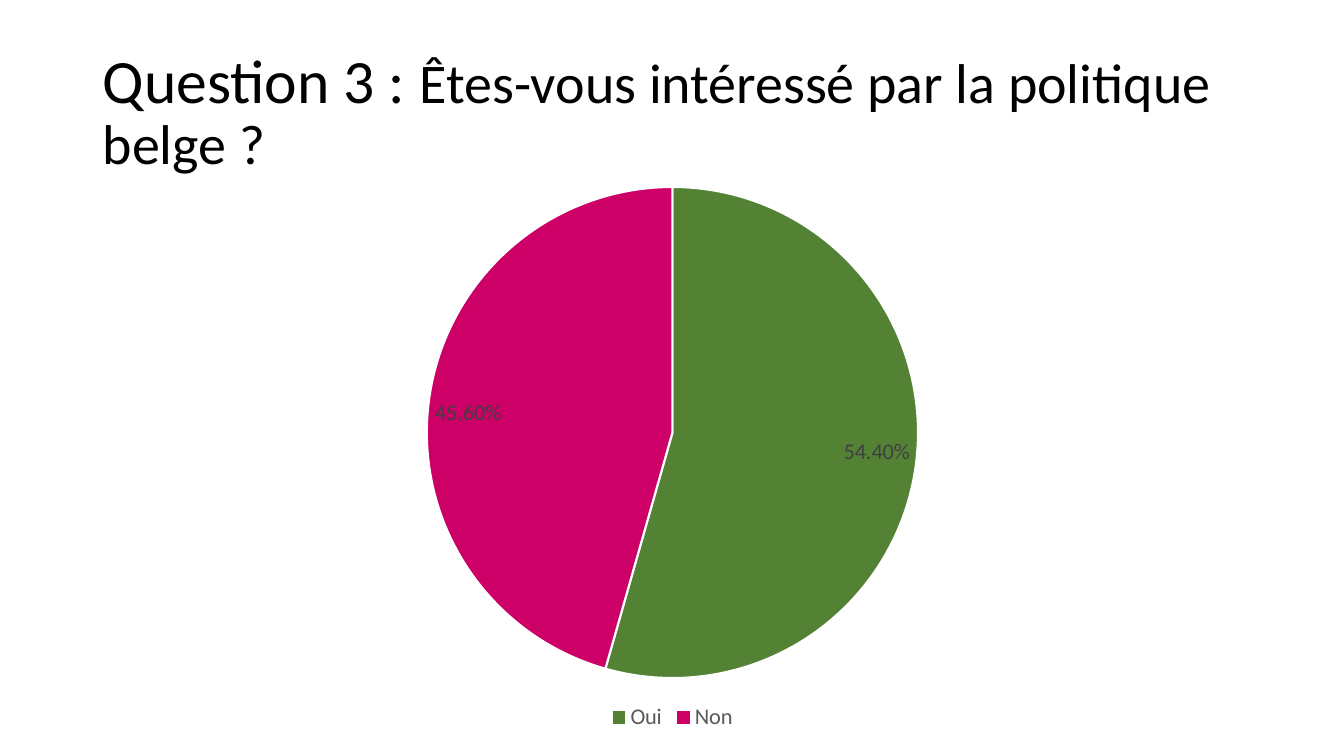
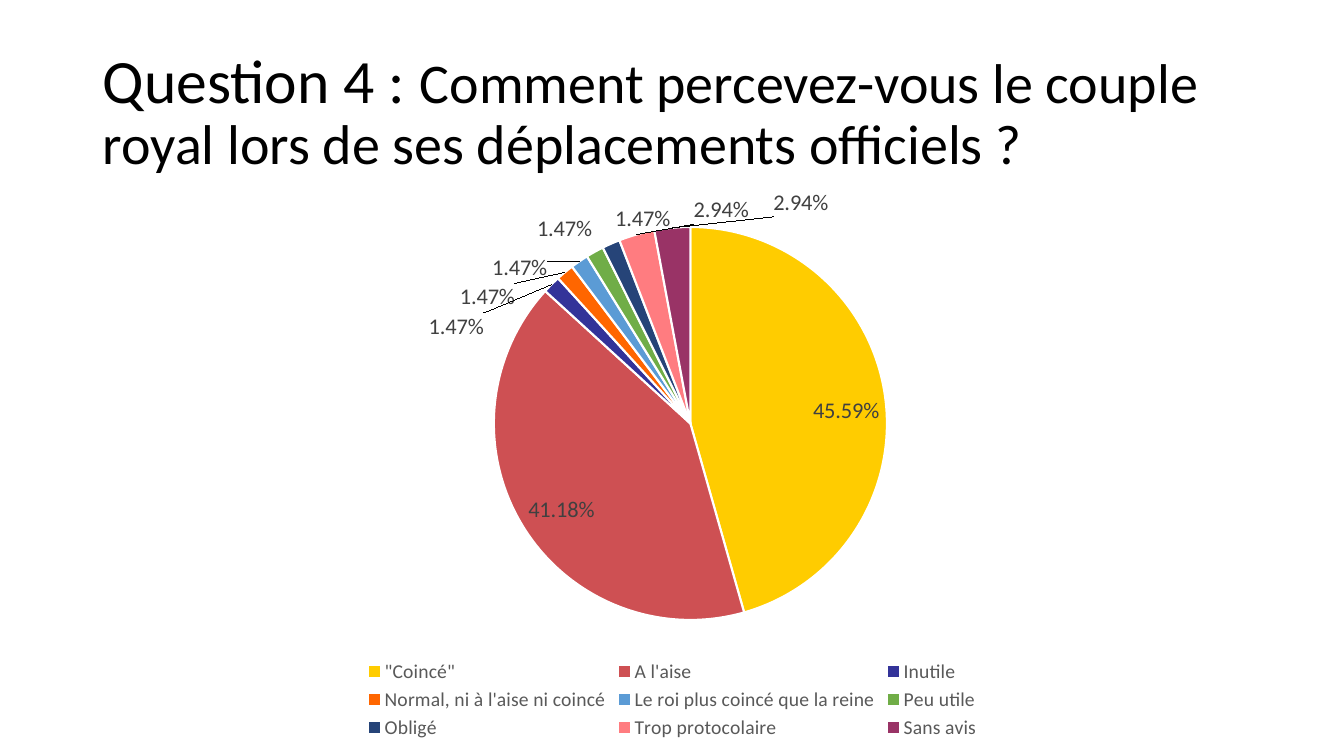
from dataclasses import dataclass

from lxml.etree import SubElement
from pptx import Presentation
from pptx.chart.data import CategoryChartData as ChartData
from pptx.dml.color import RGBColor as RGB
from pptx.enum.chart import XL_CHART_TYPE as Kind, XL_LABEL_POSITION as Spot
from pptx.enum.chart import XL_LEGEND_POSITION as Side
from pptx.enum.text import MSO_ANCHOR as Anchor, MSO_AUTO_SIZE as Fit, PP_ALIGN as Align
from pptx.oxml.ns import qn
from pptx.util import Inches, Pt

FONT = "Calibri"
FORMAT = "0.00%"
BLACK = RGB(0x00, 0x00, 0x00)
WHITE = RGB(0xFF, 0xFF, 0xFF)
GREY = RGB(0x59, 0x59, 0x59)
DARK = RGB(0x40, 0x40, 0x40)
GREEN = RGB(0x54, 0x82, 0x35)
PINK = RGB(0xCC, 0x00, 0x66)
GOLD = RGB(0xFF, 0xCC, 0x00)
RED = RGB(0xCE, 0x50, 0x53)
INDIGO = RGB(0x33, 0x33, 0x99)
ORANGE = RGB(0xFF, 0x66, 0x00)
BLUE = RGB(0x5B, 0x9B, 0xD5)
LIME = RGB(0x70, 0xAD, 0x47)
NAVY = RGB(0x26, 0x44, 0x78)
SALMON = RGB(0xFF, 0x7C, 0x80)
PLUM = RGB(0x99, 0x33, 0x66)

WIDE, HIGH = Inches(13.33), Inches(7.5)
LEFT, SPAN = 6.9, 86.27  # percent of the slide's width
TITLE = (5.33, 19.33)  # top and height, percent of the slide's height


@dataclass(frozen=True)
class Slice:
    name: str
    value: float
    color: RGB
    shift: tuple[float, float] | None = None  # label outside, moved by percent of the chart


@dataclass(frozen=True)
class Poll:
    number: int
    question: str
    rows: tuple[float, float]  # top and height, percent of the slide's height
    legend: int
    slices: list[Slice]
    plot: tuple[float, ...] | None = None  # x, y, w, h, percent of the chart


POLLS = [
    Poll(3, "Êtes-vous intéressé par la politique belge ?", (22.9, 74.4), 16, [
        Slice("Oui", 0.544, GREEN),
        Slice("Non", 0.456, PINK),
    ]),
    Poll(4, "Comment percevez-vous le couple royal lors de ses déplacements officiels ?",
         (22.8, 75.6), 14, [
             Slice('"Coincé"', 0.4559, GOLD),
             Slice("A l'aise", 0.4118, RED),
             Slice("Inutile", 0.0147, INDIGO, (-5.5, 10.5)),
             Slice("Normal, ni à l'aise ni coincé", 0.0147, ORANGE, (-4, 7.5)),
             Slice("Le roi plus coincé que la reine", 0.0147, BLUE, (-2.5, 4.5)),
             Slice("Peu utile", 0.0147, LIME, (0, -0.7)),
             Slice("Obligé", 0.0147, NAVY, (5.3, -0.9)),
             Slice("Trop protocolaire", 0.0294, SALMON, (9.8, -0.8)),
             Slice("Sans avis", 0.0294, PLUM, (13.5, -0.9)),
         ], (34.6, 7.9, 33.9, 72.1)),
]


def box(rows: tuple[float, float]) -> tuple[int, ...]:
    """Turn a band of rows into left, top, width and height."""
    top, tall = rows
    return tuple(int(full * part / 100) for full, part in
                 ((WIDE, LEFT), (HIGH, top), (WIDE, SPAN), (HIGH, tall)))


def style(font, size: int, color: RGB) -> None:
    font.name, font.size = FONT, Pt(size)
    font.color.rgb = color


def place(parent, index: int, **marks) -> None:
    """Insert a manual layout as the given child of a chart element."""
    for old in parent.findall(qn("c:layout")):
        parent.remove(old)
    layout = SubElement(parent, qn("c:layout"))
    parent.insert(index, layout)
    manual = SubElement(layout, qn("c:manualLayout"))
    for tag, value in marks.items():
        SubElement(manual, qn(f"c:{tag}")).set("val", str(value))


def add_title(slide, poll: Poll) -> None:
    title = slide.shapes.title
    title.left, title.top, title.width, title.height = box(TITLE)
    frame = title.text_frame
    frame.word_wrap, frame.auto_size = True, Fit.NONE
    frame.vertical_anchor = Anchor.MIDDLE
    line = frame.paragraphs[0]
    line.alignment, line.line_spacing = Align.LEFT, 0.9
    style(line.font, 40, BLACK)
    head = line.add_run()
    head.text, head.font.size = f"Question {poll.number} : ", Pt(44)
    tail = line.add_run()
    tail.text, tail.font.size = poll.question, Pt(40)


def add_labels(series, slices: list[Slice]) -> None:
    labels = series.data_labels
    labels.show_value = True
    labels.number_format, labels.number_format_is_linked = FORMAT, False
    labels.position = Spot.INSIDE_END
    style(labels.font, 16, DARK)
    moved = [(i, part.shift) for i, part in enumerate(slices) if part.shift]
    for i, _ in moved:
        label = series.points[i].data_label
        style(label.font, 16, DARK)
        label.position = Spot.OUTSIDE_END
    for (_, (x, y)), node in zip(moved, labels._element.findall(qn("c:dLbl"))):
        place(node, 1, x=x / 100, y=y / 100)
        form = SubElement(node, qn("c:numFmt"))
        form.set("formatCode", FORMAT)
        form.set("sourceLinked", "0")
        node.insert(2, form)


def add_pie(slide, poll: Poll) -> None:
    data = ChartData(number_format=FORMAT)
    data.categories = [part.name for part in poll.slices]
    data.add_series("Series 1", [part.value for part in poll.slices])
    chart = slide.shapes.add_chart(Kind.PIE, *box(poll.rows), data).chart
    chart.has_title = False
    style(chart.font, 10, BLACK)
    chart.has_legend = True
    chart.legend.position = Side.BOTTOM
    chart.legend.include_in_layout = False
    style(chart.legend.font, poll.legend, GREY)
    pie = chart.plots[0]
    pie.vary_by_categories = True
    series = pie.series[0]
    for i, part in enumerate(poll.slices):
        look = series.points[i].format
        look.fill.solid()
        look.fill.fore_color.rgb = part.color
        look.line.color.rgb, look.line.width = WHITE, Pt(1.5)
    add_labels(series, poll.slices)
    if poll.plot:
        x, y, w, h = (share / 100 for share in poll.plot)
        place(chart._chartSpace.chart.plotArea, 0, layoutTarget="inner",
              xMode="edge", yMode="edge", x=x, y=y, w=w, h=h)


def main() -> None:
    deck = Presentation()
    deck.slide_width, deck.slide_height = WIDE, HIGH
    for poll in POLLS:
        slide = deck.slides.add_slide(deck.slide_layouts[5])
        add_title(slide, poll)
        add_pie(slide, poll)
    deck.save("out.pptx")


if __name__ == "__main__":
    main()
